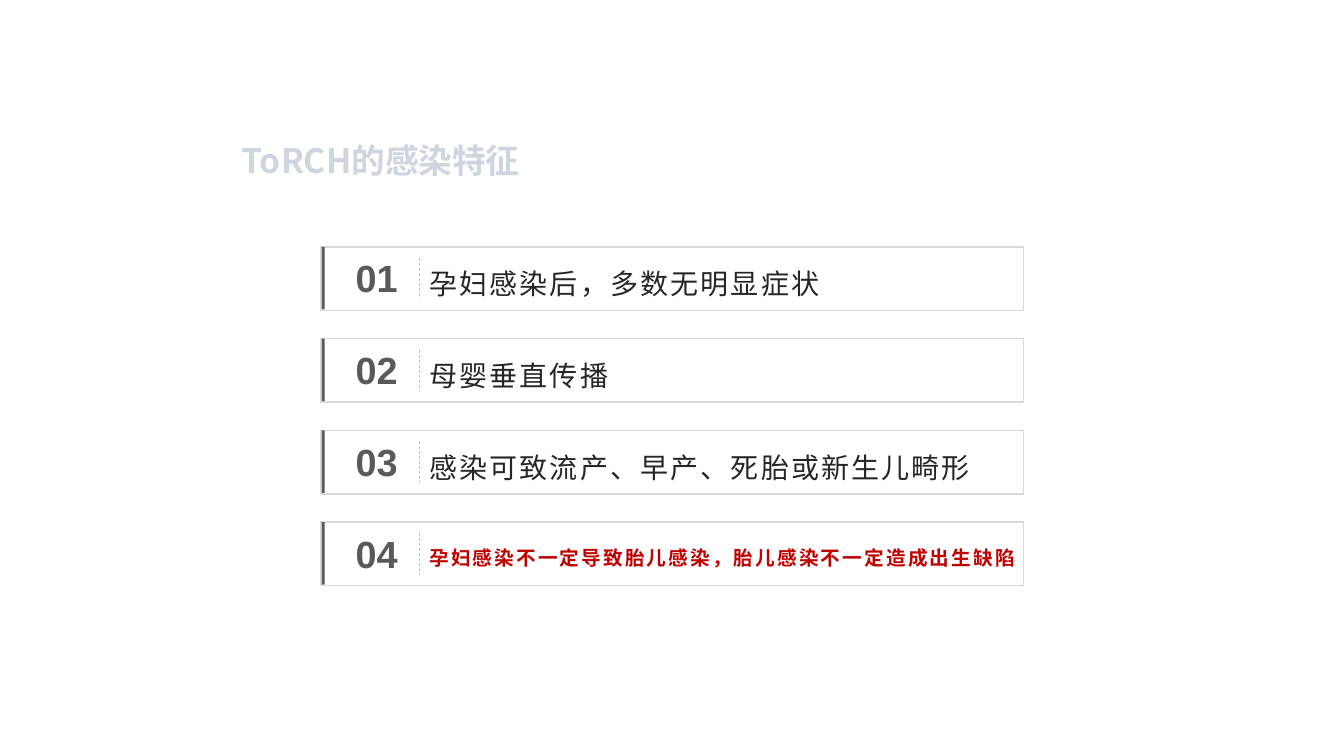
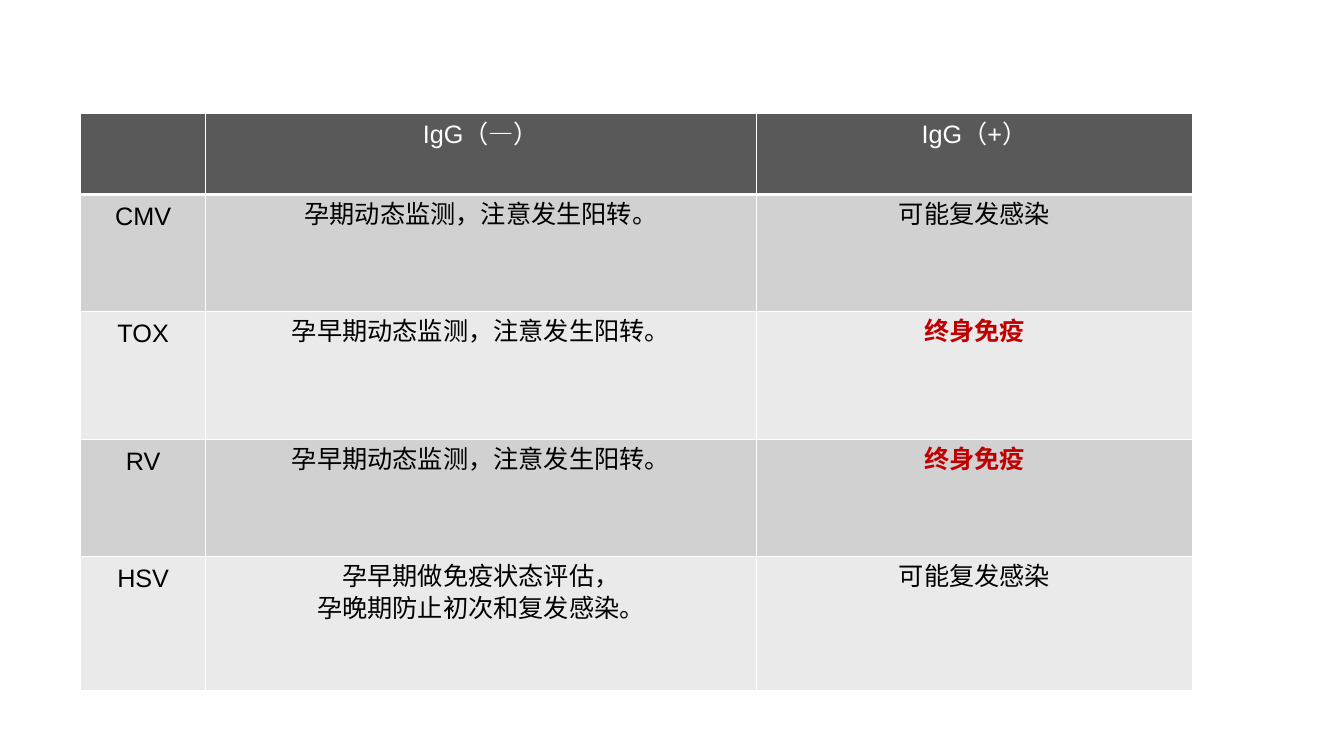
from dataclasses import dataclass

from lxml import etree
from pptx import Presentation
from pptx.dml.color import RGBColor
from pptx.enum import dml, shapes, text
from pptx.oxml import ns
from pptx.util import Inches, Pt


@dataclass(frozen=True)
class Theme:
    latin: str = "Arial"
    cjk: str = "Noto Sans CJK SC"
    white: str = "FFFFFF"
    black: str = "000000"
    ink: str = "262626"
    dark: str = "595959"
    frame: str = "D9D9D9"
    divider: str = "BFBFBF"
    accent: str = "C00000"
    title: str = "CED5DF"
    title_outline: str = "8496B0"
    bands: tuple = ("D1D1D1", "EAEAEA")
    title_size: float = 24
    number_size: float = 27
    item_size: float = 20
    small_size: float = 14
    table_size: float = 18
    table_leading: float = 22.6
    tracking: float = 1.5


THEME = Theme()
ITEMS = [
    ("孕妇感染后，多数无明显症状", False),
    ("母婴垂直传播", False),
    ("感染可致流产、早产、死胎或新生儿畸形", False),
    ("孕妇感染不一定导致胎儿感染，胎儿感染不一定造成出生缺陷", True),
]
IMMUNE = "终身免疫"
TABLE_ROWS = [
    ("", "IgG（—）", "IgG（+）"),
    ("CMV", "孕期动态监测，注意发生阳转。", "可能复发感染"),
    ("TOX", "孕早期动态监测，注意发生阳转。", IMMUNE),
    ("RV", "孕早期动态监测，注意发生阳转。", IMMUNE),
    ("HSV", "孕早期做免疫状态评估，\n孕晚期防止初次和复发感染。", "可能复发感染"),
]


def line_xml(tag, color, width):
    """Return a solid DrawingML line element; width is in points."""
    line = etree.Element(ns.qn(tag), w=str(Pt(width)))
    fill = etree.SubElement(line, ns.qn("a:solidFill"))
    etree.SubElement(fill, ns.qn("a:srgbClr"), val=color)
    return line


class SlideBuilder:
    def __init__(self, deck, theme):
        self.deck = deck
        self.theme = theme
        self.slide = None

    def new_slide(self):
        self.slide = self.deck.slides.add_slide(self.deck.slide_layouts[6])

    def add_run(self, para, words, size, color, bold=False, latin=None, tracking=0):
        span = para.add_run()
        span.text = words
        font = span.font
        font.size = Pt(size)
        font.bold = bold
        font.color.rgb = RGBColor.from_string(color)
        font.name = latin or self.theme.latin
        props = span._r.get_or_add_rPr()
        props.find(ns.qn("a:latin")).addnext(
            etree.Element(ns.qn("a:ea"), typeface=self.theme.cjk))
        if tracking:
            props.set("spc", str(round(tracking * 100)))
        return span

    def text_box(self, left, top, width, height, anchor=text.MSO_ANCHOR.MIDDLE):
        box = self.slide.shapes.add_textbox(
            Inches(left), Inches(top), Inches(width), Inches(height))
        frame = box.text_frame
        frame.word_wrap = True
        frame.vertical_anchor = anchor
        return frame

    def title(self, words):
        theme = self.theme
        frame = self.text_box(2.3, 1.29, 4.66, 0.5, text.MSO_ANCHOR.BOTTOM)
        frame.margin_bottom = 0
        span = self.add_run(frame.paragraphs[0], words, theme.title_size,
                            theme.title, bold=True, latin=theme.cjk)
        span._r.get_or_add_rPr().insert(
            0, line_xml("a:ln", theme.title_outline, 1.75))

    def rectangle(self, left, top, width, height, fill, border=None):
        shape = self.slide.shapes.add_shape(
            shapes.MSO_SHAPE.RECTANGLE,
            Inches(left), Inches(top), Inches(width), Inches(height))
        shape.shadow.inherit = False
        shape.fill.solid()
        shape.fill.fore_color.rgb = RGBColor.from_string(fill)
        if border:
            shape.line.color.rgb = RGBColor.from_string(border)
            shape.line.width = Pt(1)
        else:
            shape.line.fill.background()

    def dashed_divider(self, left, top, bottom):
        line = self.slide.shapes.add_connector(
            shapes.MSO_CONNECTOR.STRAIGHT,
            Inches(left), Inches(top), Inches(left), Inches(bottom))
        line.line.color.rgb = RGBColor.from_string(self.theme.divider)
        line.line.width = Pt(0.5)
        line.line.dash_style = dml.MSO_LINE.DASH
        etree.SubElement(line._element.spPr, ns.qn("a:effectLst"))

    def numbered_item(self, top, number, words, key):
        """Draw one framed row; a key row is small, bold and red."""
        theme = self.theme
        self.rectangle(3.18, top, 6.97, 0.63, theme.white, theme.frame)
        self.rectangle(3.19, top, 0.03, 0.62, theme.dark)
        para = self.text_box(3.32, top + 0.03, 0.83, 0.55).paragraphs[0]
        para.alignment = text.PP_ALIGN.CENTER
        self.add_run(para, f"{number:02d}", theme.number_size, theme.dark, bold=True)
        self.dashed_divider(4.16, top + 0.11, top + 0.52)
        para = self.text_box(4.16, top + 0.15, 6.39, 0.36).paragraphs[0]
        para.line_spacing = 1.2
        self.add_run(para, words, theme.small_size if key else theme.item_size,
                     theme.accent if key else theme.ink, key,
                     tracking=theme.tracking)

    def fill_cell(self, cell, words, fill, color, bold, top_line, bottom_line):
        cell.fill.solid()
        cell.fill.fore_color.rgb = RGBColor.from_string(fill)
        props = cell._tc.get_or_add_tcPr()
        widths = {"L": 1, "R": 1, "T": top_line, "B": bottom_line}
        for place, (side, width) in enumerate(widths.items()):
            props.insert(place, line_xml(f"a:ln{side}", self.theme.white, width))
        frame = cell.text_frame
        for index, line in enumerate(words.split("\n")):
            para = frame.add_paragraph() if index else frame.paragraphs[0]
            para.alignment = text.PP_ALIGN.CENTER
            para.line_spacing = Pt(self.theme.table_leading)
            if line:
                self.add_run(para, line, self.theme.table_size, color, bold)

    def table(self, left, top, widths, heights, rows):
        theme = self.theme
        table = self.slide.shapes.add_table(
            len(rows), len(widths), Inches(left), Inches(top),
            Inches(sum(widths)), Inches(sum(heights))).table
        for column, width in zip(table.columns, widths):
            column.width = Inches(width)
        for r, (row, height) in enumerate(zip(rows, heights)):
            table.rows[r].height = Inches(height)
            fill = theme.bands[(r - 1) % 2] if r else theme.dark
            for c, words in enumerate(row):
                key = words == IMMUNE
                color = theme.accent if key else theme.black if r else theme.white
                self.fill_cell(table.cell(r, c), words, fill, color, key,
                               top_line=3 if r == 1 else 1,
                               bottom_line=1 if r else 3)


def main():
    deck = Presentation()
    deck.slide_width, deck.slide_height = Inches(13.33), Inches(7.5)
    builder = SlideBuilder(deck, THEME)

    builder.new_slide()
    builder.title("ToRCH的感染特征")
    for index, (words, key) in enumerate(ITEMS):
        builder.numbered_item(2.45 + 0.91 * index, index + 1, words, key)

    builder.new_slide()
    builder.table(0.8, 1.13, (1.24, 5.46, 4.33),
                  (0.8, 1.16, 1.27, 1.16, 1.33), TABLE_ROWS)

    deck.save("out.pptx")


if __name__ == "__main__":
    main()
